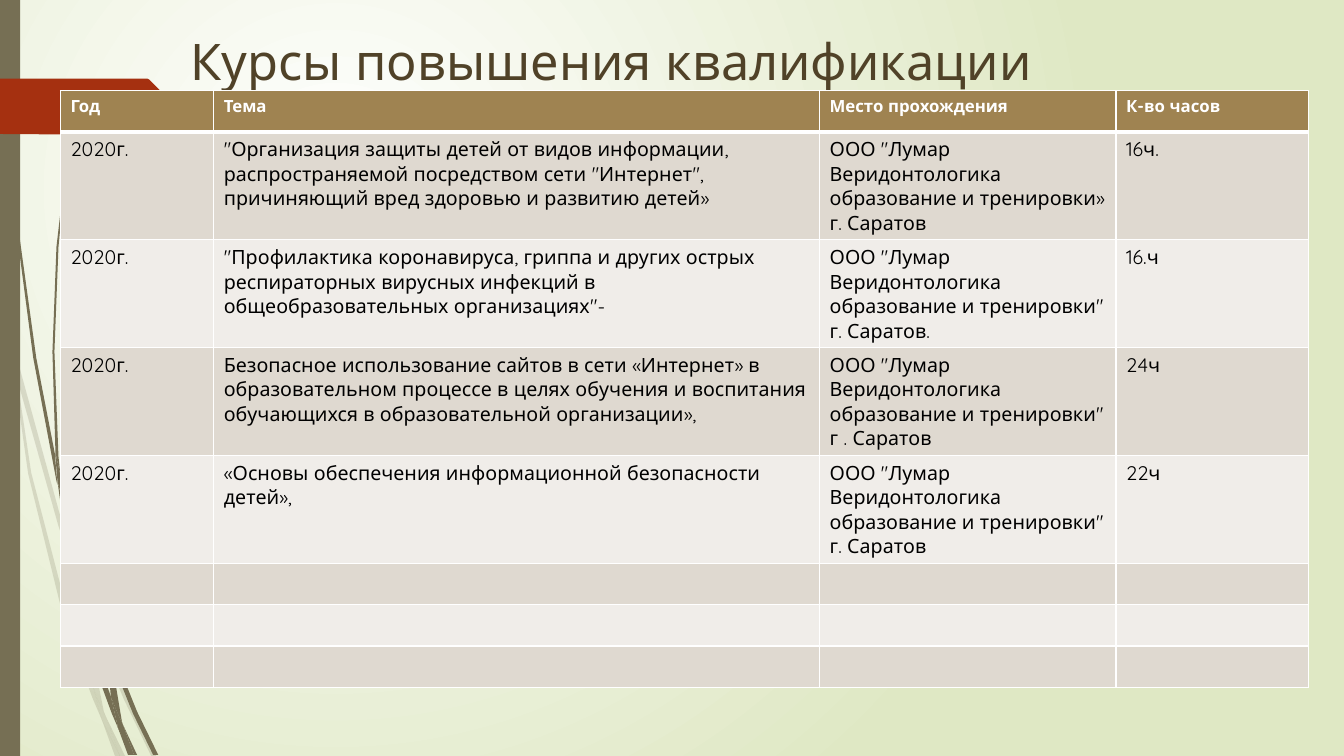
from pptx import Presentation
from pptx.dml.color import RGBColor
from pptx.enum import shapes, text
from pptx.oxml import parse_xml
from pptx.oxml.ns import nsdecls
from pptx.util import Inches, Pt

FONT = "Quicksand"
TITLE = "Курсы повышения квалификации"
HEADER = ("Год", "Тема", "Место прохождения", "К-во часов")
CENTRE = 'ООО "Лумар Веридонтологика образование и тренировки'
COURSES = [
    ("2020г.", '"Организация защиты детей от видов информации, распространяемой посредством '
     'сети "Интернет", причиняющий вред здоровью и развитию детей»',
     CENTRE + "» г. Саратов", "16ч."),
    ("2020г.", '"Профилактика коронавируса, гриппа и других острых респираторных вирусных '
     'инфекций в общеобразовательных организациях"-',
     CENTRE + '" г. Саратов.', "16.ч"),
    ("2020г.", "Безопасное использование сайтов в сети «Интернет» в образовательном процессе "
     "в целях обучения и воспитания обучающихся в образовательной организации»,",
     CENTRE + '" г . Саратов', "24ч"),
    ("2020г.", "«Основы обеспечения информационной безопасности детей»,",
     CENTRE + '" г. Саратов', "22ч"),
]
EMPTY_ROWS = 3
COL_WIDTHS = (1.52, 6.01, 2.94, 1.91)
ROW_H, COURSE_H = 0.41, 1.07

OLIVE = RGBColor(0x76, 0x6F, 0x54)
RED = RGBColor(0xA5, 0x30, 0x10)
BROWN = RGBColor(0x50, 0x42, 0x28)
GOLD = RGBColor(0x9F, 0x83, 0x51)
BANDS = (RGBColor(0xDF, 0xD9, 0xD0), RGBColor(0xF0, 0xED, 0xE9))
WHITE = RGBColor(0xFF, 0xFF, 0xFF)
BLACK = RGBColor(0, 0, 0)
GREEN = RGBColor(0xDF, 0xE8, 0xC4)

# Outlines of the grass blades, in inches
PALE_GRASS = [
    [(0.11, 3.5), (0.09, 3.22), (0, 2.82), (0, 2.99), (0.1, 3.44)],
    [(0.58, 5.22), (0.84, 5.99), (0.85, 5.86), (0.62, 5.2), (0.14, 3.45), (0.17, 3.76)],
    [(0.92, 6.07), (0.88, 5.96), (0.88, 6.1), (1.23, 6.94), (1.5, 7.5), (1.55, 7.5),
     (1.27, 6.92)],
    [(1.19, 7.5), (1.24, 7.5), (1.05, 7.11)],
    [(0.93, 6.83), (0.7, 6.19), (0.31, 4.69), (0.17, 3.76), (0.11, 3.5), (0.28, 4.7),
     (0.65, 6.21), (0.92, 6.93), (1.01, 7.14), (0.99, 7.07)],
    [(0.84, 5.99), (0.87, 6.46), (0.93, 6.83), (0.96, 6.92), (1.05, 7.11), (1.03, 7.06),
     (0.91, 6.46), (0.88, 6.1), (0.88, 6.08)],
    [(0.88, 5.84), (1.1, 4.62), (1.6, 3.49), (2.29, 2.45), (2.68, 1.98), (2.9, 1.75),
     (3.12, 1.54), (3.12, 1.53), (2.89, 1.75), (2.68, 1.97), (2.28, 2.44), (1.58, 3.48),
     (1.07, 4.61), (0.85, 5.84), (0.85, 5.86), (0.88, 5.96)],
    [(1.01, 7.14), (1.14, 7.5), (1.19, 7.5)],
    [(0.88, 6.08), (0.88, 6.1), (0.88, 5.96), (0.85, 5.86), (0.84, 5.99)],
    [(0.96, 6.92), (0.93, 6.83), (0.99, 7.07), (1.01, 7.14), (1.19, 7.5), (1.05, 7.11)],
]
DARK_GRASS = [
    [(0.07, 1.1), (0.17, 2.33), (0.33, 3.55), (0.56, 4.77), (0.57, 4.81), (0.55, 4.57),
     (0.55, 4.53), (0.36, 3.55), (0.19, 2.32), (0.08, 1.09), (0.05, 0.48), (0.04, 0),
     (0.03, 0), (0.04, 0.48)],
    [(0.88, 5.92), (1.06, 6.45), (1.06, 6.33), (1.06, 6.31), (0.93, 5.9), (0.6, 4.72),
     (0.64, 5.05)],
    [(1.13, 6.49), (1.1, 6.41), (1.11, 6.56), (1.32, 7.08), (1.52, 7.49), (1.57, 7.49),
     (1.36, 7.06)],
    [(1.1, 6.91), (0.98, 6.57), (0.72, 5.56), (0.64, 5.05), (0.57, 4.77), (0.68, 5.57),
     (0.93, 6.59), (1.11, 7.08), (1.17, 7.22), (1.16, 7.17)],
    [(0.6, 4.72), (0.58, 4.53), (0.54, 3.49), (0.58, 2.45), (0.63, 1.93), (0.7, 1.41),
     (0.62, 1.93), (0.56, 2.45), (0.52, 3.49), (0.55, 4.49)],
    [(1.33, 7.49), (1.36, 7.49), (1.22, 7.19)],
    [(0.57, 4.77), (0.64, 5.05), (0.6, 4.72), (0.55, 4.49), (0.55, 4.53)],
    [(1.11, 6.33), (1.25, 5.52), (1.58, 4.76), (2.05, 4.06), (2.31, 3.74), (2.45, 3.59),
     (2.61, 3.44), (2.6, 3.44), (2.45, 3.58), (2.31, 3.73), (2.04, 4.05), (1.56, 4.74),
     (1.22, 5.51), (1.06, 6.31), (1.1, 6.41)],
    [(1.17, 7.22), (1.27, 7.49), (1.31, 7.49)],
    [(1.06, 6.45), (1.1, 6.91), (1.16, 7.06), (1.22, 7.19), (1.21, 7.16), (1.11, 6.56),
     (1.09, 6.51)],
    [(1.06, 6.45), (1.09, 6.51), (1.11, 6.56), (1.1, 6.41), (1.06, 6.31), (1.06, 6.33)],
    [(1.16, 7.06), (1.1, 6.91), (1.16, 7.17), (1.17, 7.22), (1.3, 7.49), (1.33, 7.49),
     (1.22, 7.19)],
]
BANNER = [(0, 0.78), (1.46, 0.78), (1.48, 0.79), (1.73, 1.04), (1.74, 1.06), (1.73, 1.08),
          (1.48, 1.33), (1.46, 1.34), (0, 1.33)]


def paint(sp, color):
    sp.shadow.inherit = False
    sp.fill.solid()
    sp.fill.fore_color.rgb = color
    sp.line.fill.background()


def add_outline(parent, points, color):
    (x, y), *rest = [(Inches(px), Inches(py)) for px, py in points]
    builder = parent.build_freeform(x, y)
    builder.add_line_segments(rest, close=True)
    sp = builder.convert_to_shape()
    paint(sp, color)
    return sp


def add_grass(s, blades, alpha=None):
    group = s.shapes.add_group_shape()
    for blade in blades:
        sp = add_outline(group.shapes, blade, OLIVE)
        if alpha:
            clr = sp.fill._xPr.find(".//{*}srgbClr")
            clr.append(parse_xml(f'<a:alpha {nsdecls("a")} val="{alpha * 1000}"/>'))


def set_background(s):
    stops = "".join(f'<a:gs pos="{pos}"><a:srgbClr val="{color}"/></a:gs>'
                    for pos, color in ((0, WHITE), (100000, GREEN)))
    s.element.cSld.insert(0, parse_xml(
        f'<p:bg {nsdecls("p", "a")}><p:bgPr><a:gradFill rotWithShape="1"><a:gsLst>{stops}</a:gsLst>'
        '<a:path path="circle"><a:fillToRect l="50000" t="50000" r="100000" b="100000"/></a:path>'
        '</a:gradFill><a:effectLst/></p:bgPr></p:bg>'))


def add_text(tf, content, size, color, bold=False):
    r = tf.paragraphs[0].add_run()
    r.text = content
    r.font.name, r.font.size, r.font.bold = FONT, Pt(size), bold
    r.font.color.rgb = color


def set_borders(cell, top, bottom):
    tc_pr = cell._tc.get_or_add_tcPr()
    for side, width in (("L", 1), ("R", 1), ("T", top), ("B", bottom)):
        tc_pr.append(parse_xml(
            f'<a:ln{side} {nsdecls("a")} w="{Pt(width)}"><a:solidFill>'
            f'<a:srgbClr val="{WHITE}"/></a:solidFill></a:ln{side}>'))


def add_courses(s):
    rows = [HEADER, *COURSES] + [("",) * len(HEADER)] * EMPTY_ROWS
    heights = [ROW_H] + [COURSE_H] * len(COURSES) + [ROW_H] * EMPTY_ROWS
    table = s.shapes.add_table(len(rows), len(HEADER), Inches(0.6), Inches(0.9),
                               Inches(sum(COL_WIDTHS)), Inches(sum(heights))).table
    for col, width in zip(table.columns, COL_WIDTHS):
        col.width = Inches(width)
    for i, (row, height) in enumerate(zip(rows, heights)):
        table.rows[i].height = Inches(height)
        head = i == 0
        for j, content in enumerate(row):
            cell = table.cell(i, j)
            set_borders(cell, 3 if i == 1 else 1, 3 if head else 1)
            cell.fill.solid()
            cell.fill.fore_color.rgb = GOLD if head else BANDS[(i - 1) % 2]
            if content:
                add_text(cell.text_frame, content, 12 if head else 14,
                         WHITE if head else BLACK, head)


def main():
    prs = Presentation()
    prs.slide_width, prs.slide_height = Inches(13.33), Inches(7.5)
    s = prs.slides.add_slide(prs.slide_layouts[6])
    set_background(s)
    add_grass(s, PALE_GRASS, alpha=20)
    add_grass(s, DARK_GRASS)
    paint(s.shapes.add_shape(shapes.MSO_SHAPE.RECTANGLE, 0, 0, Inches(0.2), prs.slide_height),
          OLIVE)
    add_outline(s.shapes, BANNER, RED)
    tf = s.shapes.add_textbox(Inches(1.79), Inches(0.23), Inches(9.75), Inches(0.74)).text_frame
    tf.word_wrap = True
    tf.vertical_anchor = text.MSO_ANCHOR.MIDDLE
    add_text(tf, TITLE, 36, BROWN)
    add_courses(s)
    prs.save("out.pptx")


if __name__ == "__main__":
    main()
